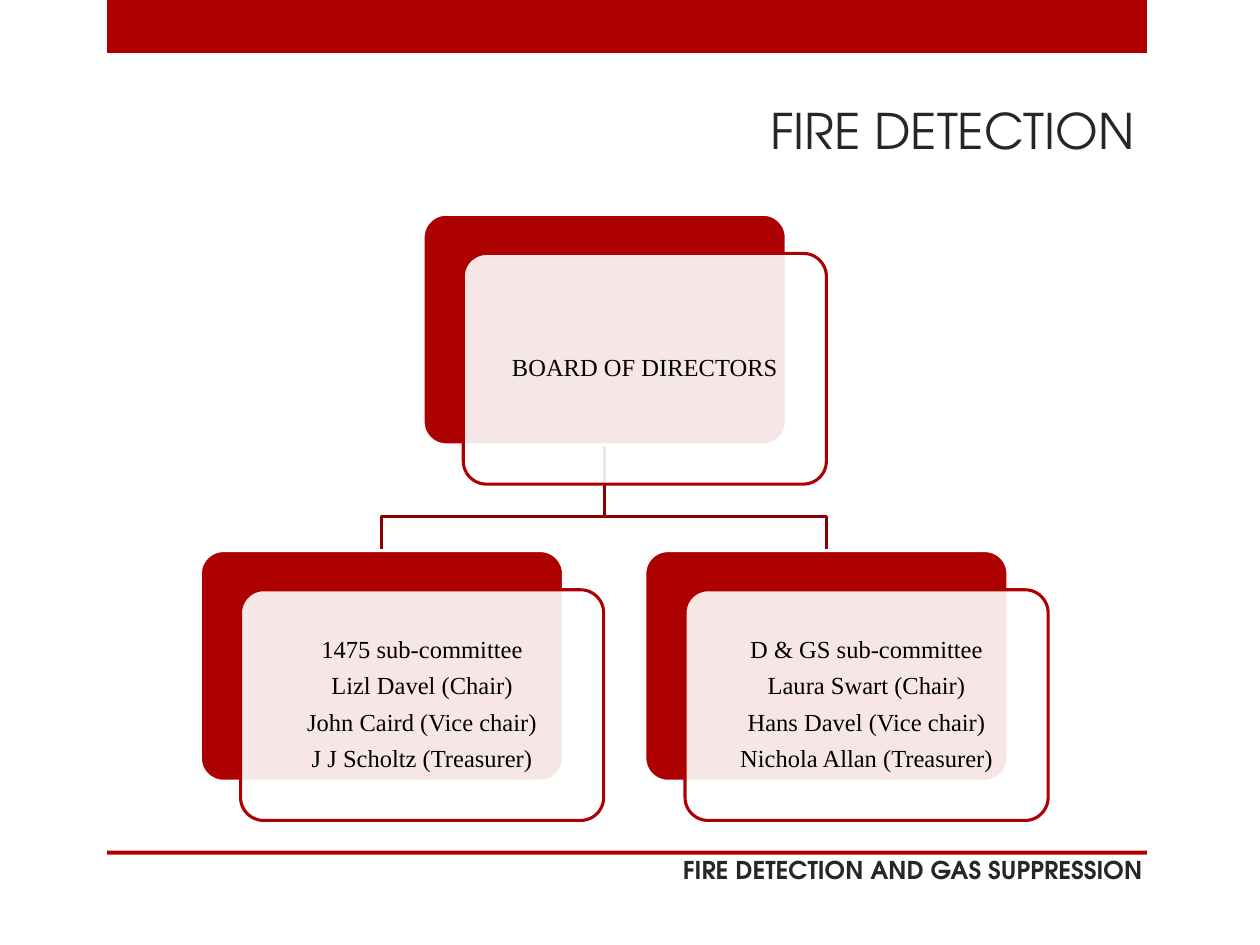
"""Builds the fire detection committee chart slide."""
import pptx
import pptx.dml.color
import pptx.enum.shapes
import pptx.enum.text
import pptx.oxml
import pptx.oxml.ns
import pptx.util

Cm = pptx.util.Cm
Pt = pptx.util.Pt
RGB = pptx.dml.color.RGBColor
KIND = pptx.enum.shapes.MSO_SHAPE
ALIGN = pptx.enum.text.PP_ALIGN
ANCHOR = pptx.enum.text.MSO_ANCHOR

RED = RGB(0xAD, 0x01, 0x01)
DARK = RGB(0x8B, 0x01, 0x01)
WHITE = RGB(0xFF, 0xFF, 0xFF)
BLACK = RGB(0, 0, 0)
GREY = RGB(0x26, 0x26, 0x26)

WIDE, HIGH = 7.32, 4.65
TOP, LOW = 4.32, 11.1
BOARD = (8.53, TOP, ["BOARD OF DIRECTORS"])
TEAMS = [
    (4.04, LOW, ["1475 sub-committee", "Lizl Davel (Chair)",
                 "John Caird (Vice chair)", "J J Scholtz (Treasurer)"]),
    (13, LOW, ["D & GS sub-committee", "Laura Swart (Chair)",
               "Hans Davel (Vice chair)", "Nichola Allan (Treasurer)"]),
]


class Deck:
    head = "TeX Gyre Adventor"
    body = "Times New Roman"
    edge = Pt(1.75)

    def __init__(self, slide):
        self.slide = slide

    def font(self, para, name, size, color, bold=False):
        for run in para.runs:
            run.font.name = name
            run.font.size = Pt(size)
            run.font.color.rgb = color
            run.font.bold = bold

    def shape(self, kind, x, y, w, h, fill, line=None):
        item = self.slide.shapes.add_shape(kind, Cm(x), Cm(y), Cm(w), Cm(h))
        item.shadow.inherit = False
        item.fill.solid()
        item.fill.fore_color.rgb = fill
        if line is None:
            item.line.fill.background()
        else:
            item.line.color.rgb = line
            item.line.width = self.edge
        return item

    def bar(self, y, h):
        self.shape(KIND.RECTANGLE, 2.16, y, 20.96, h, RED)

    def label(self, x, y, w, h, text, size, bold=False):
        frame = self.slide.shapes.add_textbox(Cm(x), Cm(y), Cm(w), Cm(h)).text_frame
        frame.word_wrap = True
        frame.text = text
        para = frame.paragraphs[0]
        para.alignment = ALIGN.RIGHT
        self.font(para, self.head, size, GREY, bold)

    def plate(self, x, y, fill, line):
        item = self.shape(KIND.ROUNDED_RECTANGLE, x, y, WIDE, HIGH, fill, line)
        item.adjustments[0] = 0.1
        return item

    def card(self, x, y, rows):
        self.plate(x, y, RED, WHITE)
        front = self.plate(x + 0.81, y + 0.79, WHITE, RED)
        color = front.fill._xPr.find(".//" + pptx.oxml.ns.qn("a:srgbClr"))
        alpha = pptx.oxml.parse_xml(
            '<a:alpha %s val="90000"/>' % pptx.oxml.ns.nsdecls("a"))
        color.append(alpha)
        frame = front.text_frame
        frame.word_wrap = True
        frame.vertical_anchor = ANCHOR.MIDDLE
        frame.margin_left = frame.margin_right = Cm(0.15)
        frame.margin_top = frame.margin_bottom = Cm(0.15)
        frame.text = "\n".join(rows)
        for para in frame.paragraphs:
            para.alignment = ALIGN.CENTER
            para.line_spacing = 0.9
            para.space_after = Pt(5.5)
            self.font(para, self.body, 14, BLACK)

    def link(self, x, y, to_x, to_y):
        turn = Cm(to_y - 0.69)
        path = self.slide.shapes.build_freeform(Cm(x), Cm(y))
        path.add_line_segments(
            [(Cm(x), turn), (Cm(to_x), turn), (Cm(to_x), Cm(to_y))], close=False)
        item = path.convert_to_shape()
        item.shadow.inherit = False
        item.fill.background()
        item.line.color.rgb = DARK
        item.line.width = self.edge


def main():
    show = pptx.Presentation()
    show.slide_width, show.slide_height = Cm(25.4), Cm(19.05)
    deck = Deck(show.slides.add_slide(show.slide_layouts[6]))
    deck.bar(0, 1.07)
    deck.bar(17.15, 0.08)
    deck.label(1.7, 17.12, 21.59, 1.02, "FIRE DETECTION AND GAS SUPPRESSION", 14, True)
    deck.label(2.11, 1.91, 21.01, 2.29, "FIRE DETECTION", 28)
    half = WIDE / 2
    for x, y, rows in reversed(TEAMS):
        deck.link(BOARD[0] + half, TOP + HIGH, x + half, y)
    for x, y, rows in [BOARD] + TEAMS:
        deck.card(x, y, rows)
    show.save("out.pptx")


if __name__ == "__main__":
    main()
